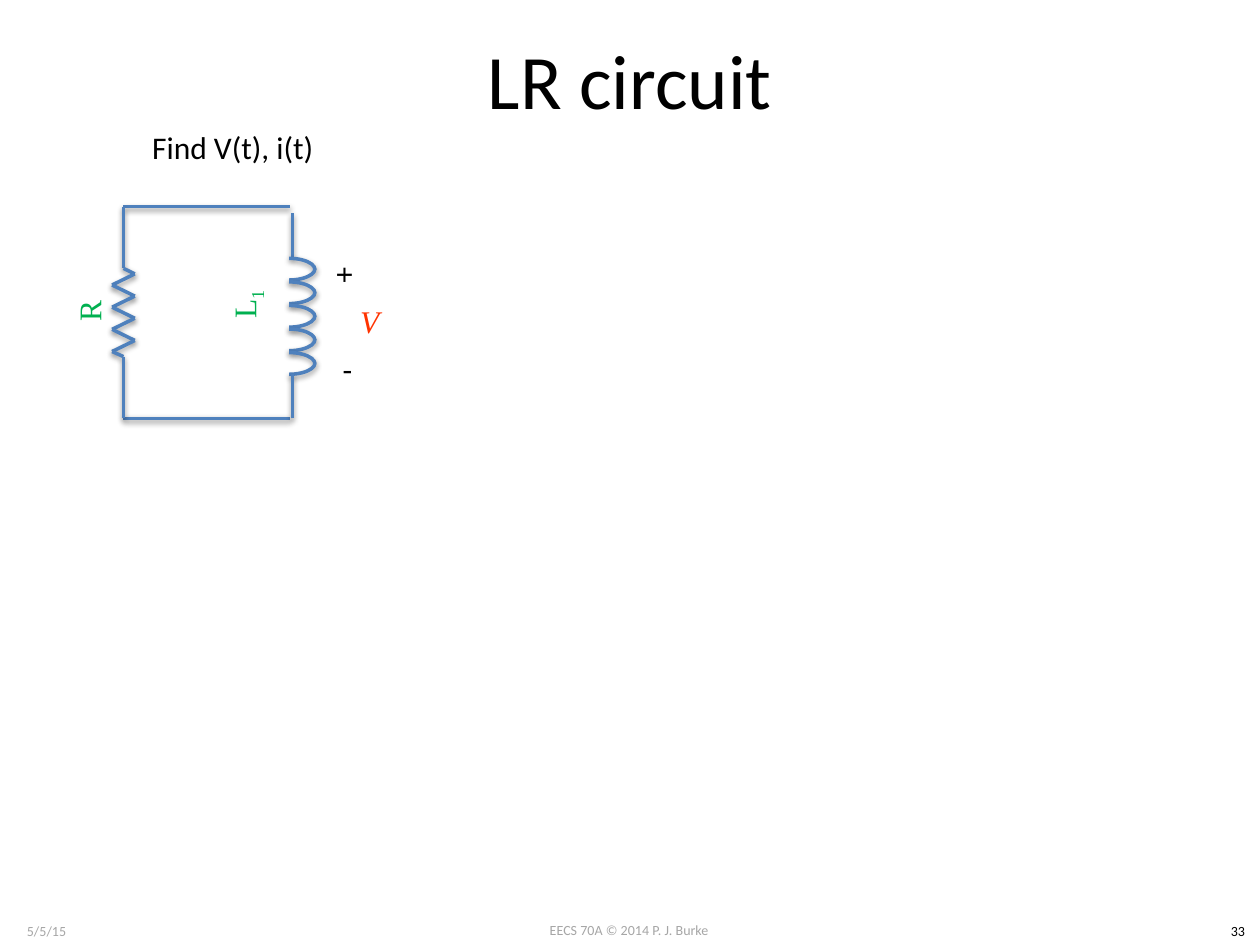
from dataclasses import dataclass
from itertools import pairwise

from lxml import etree
from pptx import Presentation
from pptx import util as u
from pptx.dml.color import RGBColor
from pptx.enum import shapes, text
from pptx.oxml.ns import qn

COLS, ROWS = 100, 75
WIDE, HIGH = u.Inches(10), u.Inches(7.5)
HUES = {"wire": "4F81BD", "ink": "000000", "grey": "A6A6A6",
        "part": "00B050", "volt": "FF3300"}
SANS, SERIF = "Calibri", "Times New Roman"


@dataclass
class Label:
    """Text in a box measured in grid columns and rows."""
    words: str
    col: float
    row: float
    cols: float
    rows: float
    hue: str = "ink"
    size: int = 18
    font: str = SANS
    turn: int = 0
    mid: bool = True
    wrap: bool = True
    slant: bool = False
    sub: str = ""


LABELS = [
    Label("EECS 70A © 2014 P. J. Burke", 38.3, 72.6, 23.3, 2.4, "grey", 8),
    Label("5/5/15", 0, 72.7, 7.4, 2.4, "grey", 8),
    Label("33", 96.5, 72.7, 3.5, 2.4, size=8),
    Label("LR circuit", 5, 0, 90, 12.5, size=44),
    Label("Find V(t), i(t)", 11.1, 9.7, 15, 4, mid=False, wrap=False),
    Label("R", 1.1, 21, 11.9, 7.3, "part", font=SERIF, turn=270),
    Label("+", 25.9, 19.9, 3.3, 4, turn=90, mid=False, wrap=False),
    Label("-", 26.2, 27.3, 2.8, 4, mid=False, wrap=False),
    Label("V", 25.5, 22.4, 7.7, 6.1, "volt", font=SERIF, slant=True),
    Label("L", 13.6, 20.5, 11.9, 7.3, "part", font=SERIF, turn=270, sub="1"),
]

LEFT, RIGHT, COIL = 9.8, 23, 23.2
TOP, BASE = 16.4, 33.2
ZIG_TOP, ZIG_BASE, ZIG_STEP, ZIG_HALF = 21.3, 28.3, 0.88, 0.9
LOOPS, LOOP_STEP, LOOP_COLS, LOOP_ROWS = 5, 1.87, 4.1, 1.8


def x(cols: float) -> int:
    return round(WIDE * cols / COLS)


def y(rows: float) -> int:
    return round(HIGH * rows / ROWS)


def paint(hex_: str) -> RGBColor:
    return RGBColor.from_string(hex_)


def style(item) -> None:
    """Give a wire its stroke and soft shadow."""
    item.line.color.rgb = paint(HUES["wire"])
    item.line.width = u.Pt(2)
    props = item._element.spPr
    glow = etree.SubElement(props, qn("a:effectLst"))
    cast = etree.SubElement(glow, qn("a:outerShdw"), blurRad="40000",
                            dist="20000", dir="5400000", rotWithShape="0")
    tint = etree.SubElement(cast, qn("a:srgbClr"), val=HUES["ink"])
    etree.SubElement(tint, qn("a:alpha"), val="38000")


def wire(home, start: tuple[float, float], end: tuple[float, float]) -> None:
    style(home.add_connector(shapes.MSO_CONNECTOR.STRAIGHT, x(start[0]),
                             y(start[1]), x(end[0]), y(end[1])))


def arc(home, row: float, flip: bool) -> None:
    item = home.add_shape(shapes.MSO_SHAPE.ARC, x(20.9), y(row),
                          x(LOOP_COLS), y(LOOP_ROWS))
    item.fill.background()
    style(item)
    if flip:
        item._element.spPr.find(qn("a:xfrm")).set("flipV", "1")


def resist(home) -> None:
    """Draw the resistor with its two leads."""
    bends = [(LEFT + (-ZIG_HALF if i % 2 else ZIG_HALF),
              ZIG_TOP + ZIG_STEP * (i + 0.5)) for i in range(8)]
    spots = [(LEFT, TOP), (LEFT, ZIG_TOP), *bends,
             (LEFT, ZIG_BASE), (LEFT, BASE)]
    for start, end in pairwise(spots):
        wire(home, start, end)


def induct(home) -> None:
    """Draw the coil with its two leads."""
    wire(home, (COIL, 20.4), (COIL, 16.9))
    for i in range(LOOPS):
        row = 20.5 + LOOP_STEP * i
        arc(home, row, False)
        arc(home, row - 0.07, True)
    wire(home, (COIL, BASE), (COIL, 29.7))


def write(home, label: Label) -> None:
    box = home.add_textbox(x(label.col), y(label.row),
                           x(label.cols), y(label.rows))
    box.rotation = label.turn
    frame = box.text_frame
    frame.word_wrap = label.wrap
    if label.mid:
        frame.vertical_anchor = text.MSO_ANCHOR.MIDDLE
    para = frame.paragraphs[0]
    para.alignment = text.PP_ALIGN.CENTER if label.mid else text.PP_ALIGN.LEFT
    for words in filter(None, (label.words, label.sub)):
        run = para.add_run()
        run.text = words
        font = run.font
        font.name, font.size = label.font, u.Pt(label.size)
        font.italic = label.slant
        font.color.rgb = paint(HUES[label.hue])
    if label.sub:
        font._element.set("baseline", "-25000")


def main() -> None:
    deck = Presentation()
    deck.slide_width, deck.slide_height = WIDE, HIGH
    home = deck.slides.add_slide(deck.slide_layouts[6]).shapes
    for row in (TOP, BASE):
        wire(home, (LEFT, row), (RIGHT, row))
    for draw in (resist, induct):
        draw(home.add_group_shape().shapes)
    for label in LABELS:
        write(home, label)
    deck.save("out.pptx")


if __name__ == "__main__":
    main()
